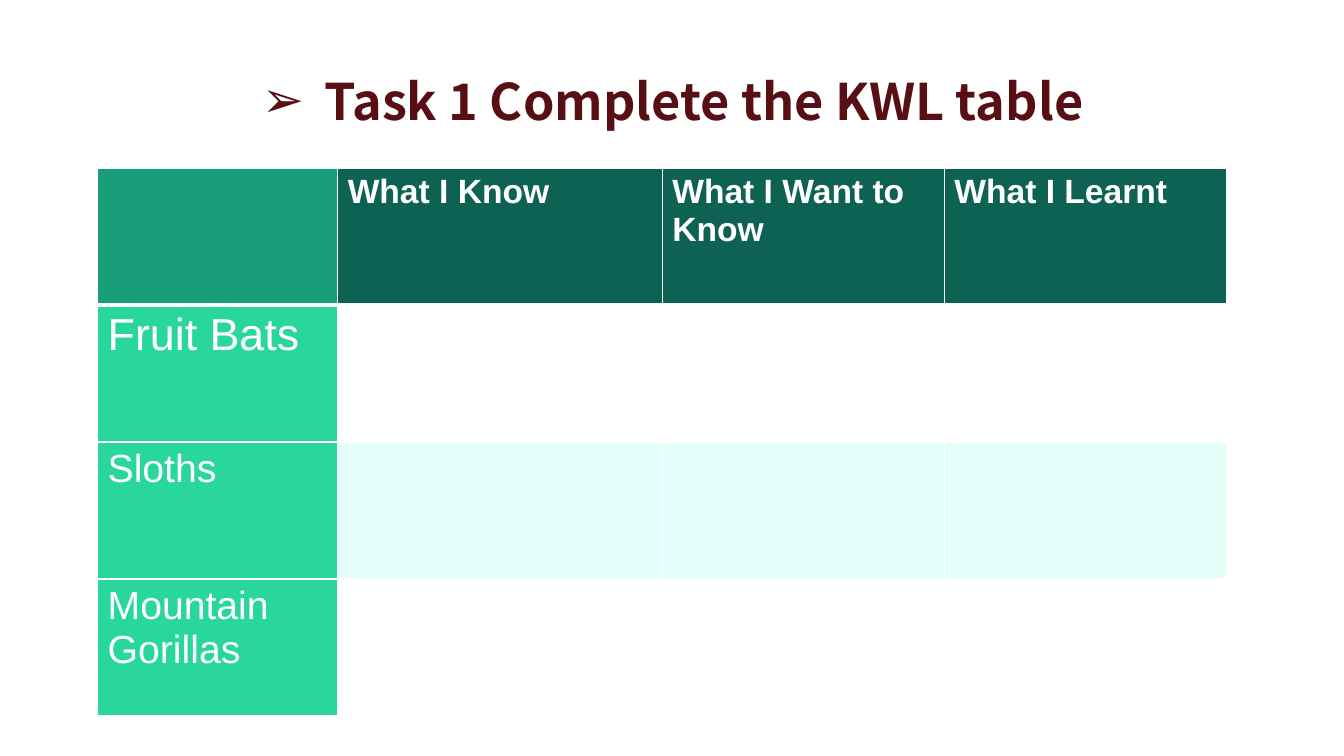
from lxml.etree import SubElement
from pptx import Presentation
from pptx.dml.color import RGBColor
from pptx.enum.text import MSO_ANCHOR
from pptx.oxml.ns import qn
from pptx.util import Cm, Pt

WHITE = RGBColor(0xFF, 0xFF, 0xFF)
MAROON = RGBColor(0x58, 0x0F, 0x13)
GREEN = RGBColor(0x18, 0x9E, 0x79)
DARK = RGBColor(0x0E, 0x62, 0x54)
MINT = RGBColor(0x29, 0xD7, 0x9D)
PALE = RGBColor(0xE4, 0xFE, 0xF9)


def write(para, text, font="Arial", size=24, color=WHITE, bold=False):
    run = para.add_run()
    run.text = text
    run.font.name = font
    run.font.size = Pt(size)
    run.font.color.rgb = color
    run.font.bold = bold


class Deck:
    def __init__(self):
        self.prs = Presentation()
        self.prs.slide_width = Cm(33.87)
        self.prs.slide_height = Cm(19.05)
        self.slide = self.prs.slides.add_slide(self.prs.slide_layouts[6])

    def title(self, text, left, top, width, height):
        box = self.slide.shapes.add_textbox(Cm(left), Cm(top), Cm(width), Cm(height))
        frame = box.text_frame
        frame.word_wrap = True
        frame.vertical_anchor = MSO_ANCHOR.MIDDLE
        para = frame.paragraphs[0]
        # Arrow bullet with a hanging indent
        props = para._p.get_or_add_pPr()
        props.set("marL", str(Cm(1.58)))
        props.set("indent", str(-Cm(1.58)))
        SubElement(props, qn("a:buFont"), typeface="Arial")
        SubElement(props, qn("a:buChar"), char="➢")
        write(para, text, font="Noto Sans CJK SC", size=36, color=MAROON, bold=True)

    def table(self, rows, cols, left, top, widths, high):
        frame = self.slide.shapes.add_table(
            rows, cols, Cm(left), Cm(top), Cm(sum(widths)), Cm(high * rows))
        table = frame.table
        table.first_row = table.horz_banding = False
        for col, width in zip(table.columns, widths):
            col.width = Cm(width)
        for row in table.rows:
            row.height = Cm(high)
        return table

    def cell(self, cell, text, fill, top=1, bottom=1, **style):
        props = cell._tc.get_or_add_tcPr()
        for side, width in zip("LRTB", (1, 1, top, bottom)):
            line = SubElement(props, qn(f"a:ln{side}"), w=str(Pt(width)))
            paint = SubElement(line, qn("a:solidFill"))
            SubElement(paint, qn("a:srgbClr"), val=str(WHITE))
        cell.fill.solid()
        cell.fill.fore_color.rgb = fill
        if text:
            write(cell.text_frame.paragraphs[0], text, **style)


def main():
    deck = Deck()
    deck.title("Task 1 Complete the KWL table", 6.35, 1.63, 22.5, 1.8)

    heads = ["", "What I Know", "What I Want to Know", "What I Learnt"]
    beasts = [("Fruit Bats", 32), ("Sloths", 28), ("Mountain Gorillas", 28)]
    table = deck.table(len(beasts) + 1, len(heads), 2.46, 4.24,
                       [6.05, 8.18, 7.11, 7.11], 3.45)

    # Header row, with a thick rule below
    for col, head in enumerate(heads):
        deck.cell(table.cell(0, col), head, DARK if head else GREEN,
                  bottom=3, bold=True)

    # One row per animal, banded
    for row, (beast, size) in enumerate(beasts, 1):
        rule = 3 if row == 1 else 1
        deck.cell(table.cell(row, 0), beast, MINT, top=rule, size=size)
        for col in range(1, len(heads)):
            deck.cell(table.cell(row, col), "", WHITE if row % 2 else PALE, top=rule)

    deck.prs.save("out.pptx")


if __name__ == "__main__":
    main()
